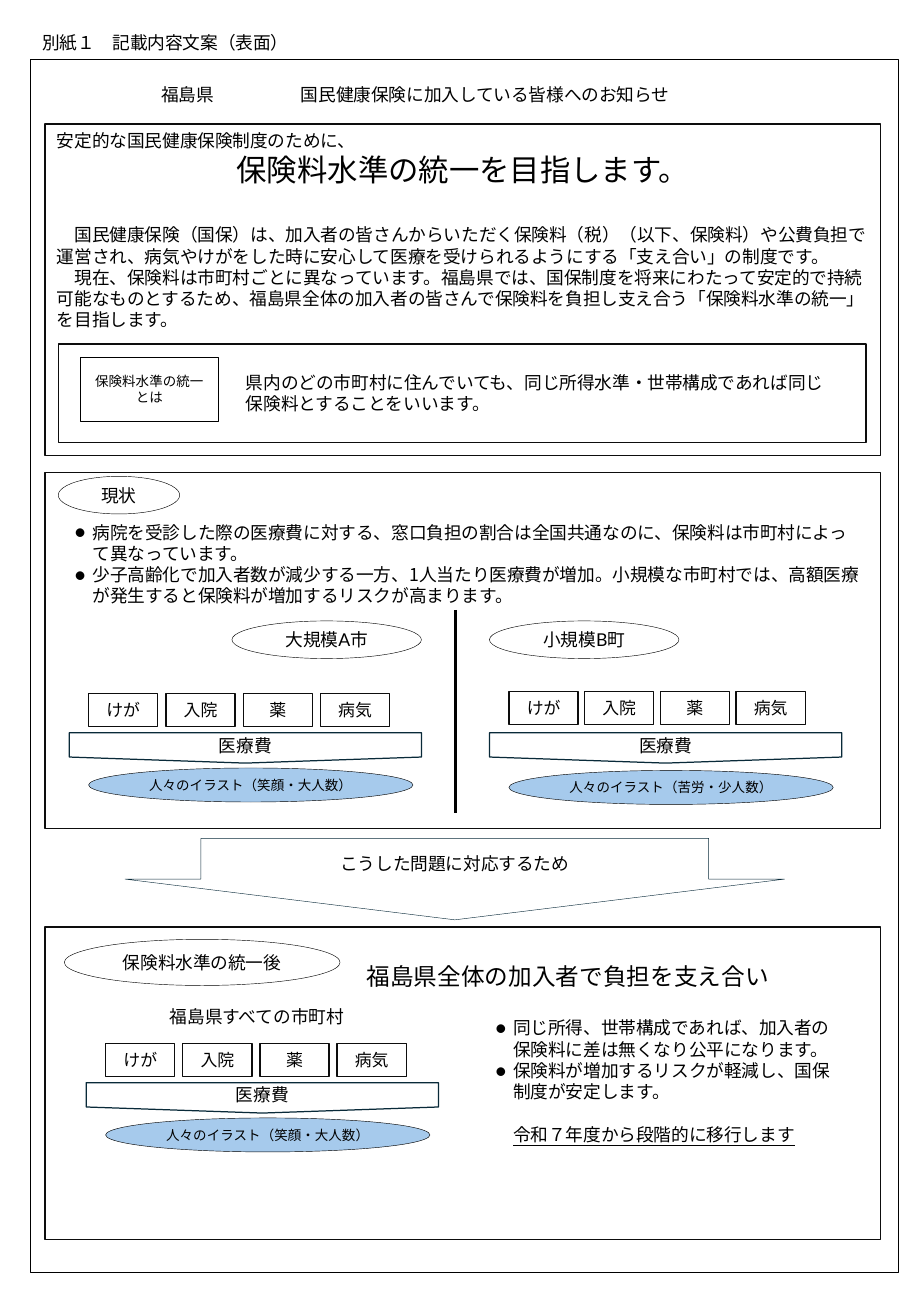
from lxml import etree
from pptx import Presentation
from pptx.dml.color import RGBColor
from pptx.enum.lang import MSO_LANGUAGE_ID
from pptx.enum.shapes import MSO_CONNECTOR, MSO_SHAPE
from pptx.enum.text import MSO_ANCHOR, PP_ALIGN
from pptx.oxml.ns import qn
from pptx.util import Inches, Pt

RECTANGLE, ELLIPSE = MSO_SHAPE.RECTANGLE, MSO_SHAPE.OVAL
FUNNEL, ARROW = MSO_SHAPE.FLOWCHART_OFFPAGE_CONNECTOR, MSO_SHAPE.DOWN_ARROW
LEFT, CENTER = PP_ALIGN.LEFT, PP_ALIGN.CENTER
TOP, MIDDLE = MSO_ANCHOR.TOP, MSO_ANCHOR.MIDDLE
COLORS = {"ink": "000000", "frame": "0D0D0D", "teal": "092A39", "people": "A6CAEC"}
LATO, NOTO = "Lato", "Noto Sans CJK JP"
BODY, SMALL, TILE, HEADING, TITLE = 10.5, 8, 10, 14, 18
INSET = (1, 0.5)

# The slide is a grid of 75 columns by 108.3 rows; boxes are (column, row, columns, rows)
WIDTH, HEIGHT = Inches(7.5), Inches(10.83)
COLUMN, ROW = WIDTH / 75, HEIGHT / 108.3

# Content: a paragraph is a dict, "\n" in its text is a line break
INTRODUCTION = [
    {"text": "安定的な国民健康保険制度のために、"},
    {"text": "保険料水準の統一を目指します。", "size": TITLE, "align": CENTER, "after": 21.6},
    {"text": "国民健康保険（国保）は、加入者の皆さんからいただく保険料（税）（以下、保険料）や"
             "公費負担で運営され、病気やけがをした時に安心して医療を受けられるようにする"
             "「支え合い」の制度です。", "first": BODY},
    {"text": "現在、保険料は市町村ごとに異なっています。福島県では、国保制度を将来にわたって"
             "安定的で持続可能なものとするため、福島県全体の加入者の皆さんで保険料を負担し"
             "支え合う「保険料水準の統一」を目指します。", "first": BODY},
]
DEFINITION = [{"text": "県内のどの市町村に住んでいても、同じ所得水準・世帯構成であれば同じ\n"
                       "保険料とすることをいいます。"}]
PRESENT = [
    {"text": "病院を受診した際の医療費に対する、窓口負担の割合は全国共通なのに、保険料は市町村によっ\n"
             "て異なっています。", "bullet": True},
    {"text": "少子高齢化で加入者数が減少する一方、1人当たり医療費が増加。小規模な市町村では、高額医療\n"
             "が発生すると保険料が増加するリスクが高まります。", "bullet": True},
]
UNIFIED = [
    {"text": "同じ所得、世帯構成であれば、加入者の\n保険料に差は無くなり公平になります。", "bullet": True},
    {"text": "保険料が増加するリスクが軽減し、国保\n制度が安定します。", "bullet": True},
    {"text": "令和７年度から段階的に移行します", "before": 12.6, "left": BODY, "underline": True},
]
# Panels: box, paragraphs, font, (left, top) inset
PANELS = [
    ((3.7, 38.9, 68.8, 29.3), PRESENT, NOTO, (2.46, 4)),
    ((3.7, 10.2, 68.8, 27.3), INTRODUCTION, LATO, INSET),
    ((4.8, 28.3, 66.5, 8.1), DEFINITION, LATO, (15.45, 2.3)),
    ((3.7, 76.3, 68.8, 25.7), UNIFIED, NOTO, (37.1, 7.4)),
]
TEXTS = [
    ((2.5, 2.1, 37.5, 2.8), "別紙１　記載内容文案（表面）", NOTO, BODY),
    ((12.3, 6.4, 8, 2.8), "福島県", LATO, BODY),
    ((23.8, 6.4, 35, 2.8), "国民健康保険に加入している皆様へのお知らせ", LATO, BODY),
    ((29.2, 78.7, 38, 3.4), "福島県全体の加入者で負担を支え合い", NOTO, HEADING),
    ((13, 82.3, 19.1, 2.8), "福島県すべての市町村", LATO, BODY),
]
OVALS = [
    ((4.8, 39.2, 10, 3.1), "現状"),
    ((19.1, 51.1, 15.6, 3.1), "大規模A市"),
    ((40.3, 51.1, 15.6, 3.1), "小規模B町"),
    ((5.3, 77.3, 22.7, 3.8), "保険料水準の統一後"),
]
CAUSES = ["けが", "入院", "薬", "病気"]
# Cost groups: funnel column and row, tile pitch, tile rise, people drop, people label
GROUPS = [
    (5.7, 60.3, 6.36, 3.2, 2.9, "人々のイラスト（笑顔・大人数）"),
    (40.3, 60.3, 6.23, 3.4, 3.1, "人々のイラスト（苦労・少人数）"),
    (7.1, 89.1, 6.35, 3.2, 2.9, "人々のイラスト（笑顔・大人数）"),
]

presentation = Presentation()
presentation.slide_width, presentation.slide_height = WIDTH, HEIGHT
slide = presentation.slides.add_slide(presentation.slide_layouts[6])


def place(box):
    return [round(value * unit) for value, unit in zip(box, (COLUMN, ROW) * 2)]


def color(name):
    return RGBColor.from_string(COLORS[name])


def write_run(paragraph, text, font_name, size, underline):
    run = paragraph.add_run()
    run.text = text
    font = run.font
    font.name, font.size, font.language_id = font_name, Pt(size), MSO_LANGUAGE_ID.JAPANESE
    font.color.rgb = color("ink")
    if underline:
        font.underline = True
    east_asian = etree.Element(qn("a:ea"), typeface=LATO)
    font._element.find(qn("a:latin")).addnext(east_asian)


def write(shape, paragraphs, font_name=LATO, inset=INSET, anchor=TOP):
    frame = shape.text_frame
    frame.word_wrap, frame.vertical_anchor = True, anchor
    frame.margin_left, frame.margin_top = round(inset[0] * COLUMN), round(inset[1] * ROW)
    for index, item in enumerate(paragraphs):
        paragraph = frame.add_paragraph() if index else frame.paragraphs[0]
        size = item.get("size", BODY)
        paragraph.alignment = item.get("align", LEFT)
        paragraph.line_spacing = Pt(1.2 * size)
        paragraph.space_before = Pt(item.get("before", 0))
        paragraph.space_after = Pt(item.get("after", 0))
        bullet = item.get("bullet")
        properties = paragraph._p.get_or_add_pPr()
        properties.set("marL", str(Pt(size if bullet else item.get("left", 0))))
        properties.set("indent", str(Pt(-size if bullet else item.get("first", 0))))
        if bullet:
            etree.SubElement(properties, qn("a:buFont"), typeface=LATO)
            etree.SubElement(properties, qn("a:buChar"), char="●")
        for number, line in enumerate(item["text"].split("\n")):
            if number:
                paragraph.add_line_break()
            write_run(paragraph, line, font_name, size, item.get("underline"))


def draw(kind, box, line, width, fill=None):
    shape = slide.shapes.add_shape(kind, *place(box))
    shape.shadow.inherit = False
    if fill:
        shape.fill.solid()
        shape.fill.fore_color.rgb = color(fill)
    else:
        shape.fill.background()
    shape.line.color.rgb, shape.line.width = color(line), Pt(width)
    return shape


def label(kind, box, text, line="ink", width=0.25, size=BODY, fill=None, anchor=MIDDLE):
    shape = draw(kind, box, line, width, fill)
    write(shape, [{"text": text, "size": size, "align": CENTER}], anchor=anchor)
    return shape


# Page frame, panels and free text
draw(RECTANGLE, (2.5, 4.9, 71.5, 99.8), "ink", 0.5)
for box, paragraphs, font_name, inset in PANELS:
    write(draw(RECTANGLE, box, "frame", 0.75), paragraphs, font_name, inset)
for box, text, font_name, size in TEXTS:
    write(slide.shapes.add_textbox(*place(box)), [{"text": text, "size": size}], font_name)

# Labels and the arrow between the panels
label(RECTANGLE, (6.6, 29.4, 11.4, 5.3), "保険料水準の統一とは", width=0.5, size=SMALL)
for box, text in OVALS:
    label(ELLIPSE, box, text)
arrow = label(ARROW, (10.3, 69, 54.3, 6.7), "こうした問題に対応するため", "teal")
arrow.adjustments[0], arrow.adjustments[1] = 0.77, 0.5

# Divider between the city and the town
divider = slide.shapes.add_connector(MSO_CONNECTOR.STRAIGHT, *place((37.5, 50.2, 37.5, 66.9)))
divider.line.color.rgb, divider.line.width = color("ink"), Pt(1.5)
etree.SubElement(divider._element.spPr, qn("a:effectLst"))

# Cost groups: tiles over a funnel over the people
for column, row, pitch, rise, drop, people in GROUPS:
    start = column + 1.6
    for index, cause in enumerate(CAUSES):
        label(RECTANGLE, (start + index * pitch, row - rise, 5.7, 2.7), cause,
              "frame", 0.75, TILE, anchor=TOP)
    label(FUNNEL, (column, row, 29, 2.5), "医療費", "teal", 0)
    label(ELLIPSE, (start, row + drop, 26.7, 2.8), people, size=SMALL, fill="people")

presentation.save("out.pptx")
